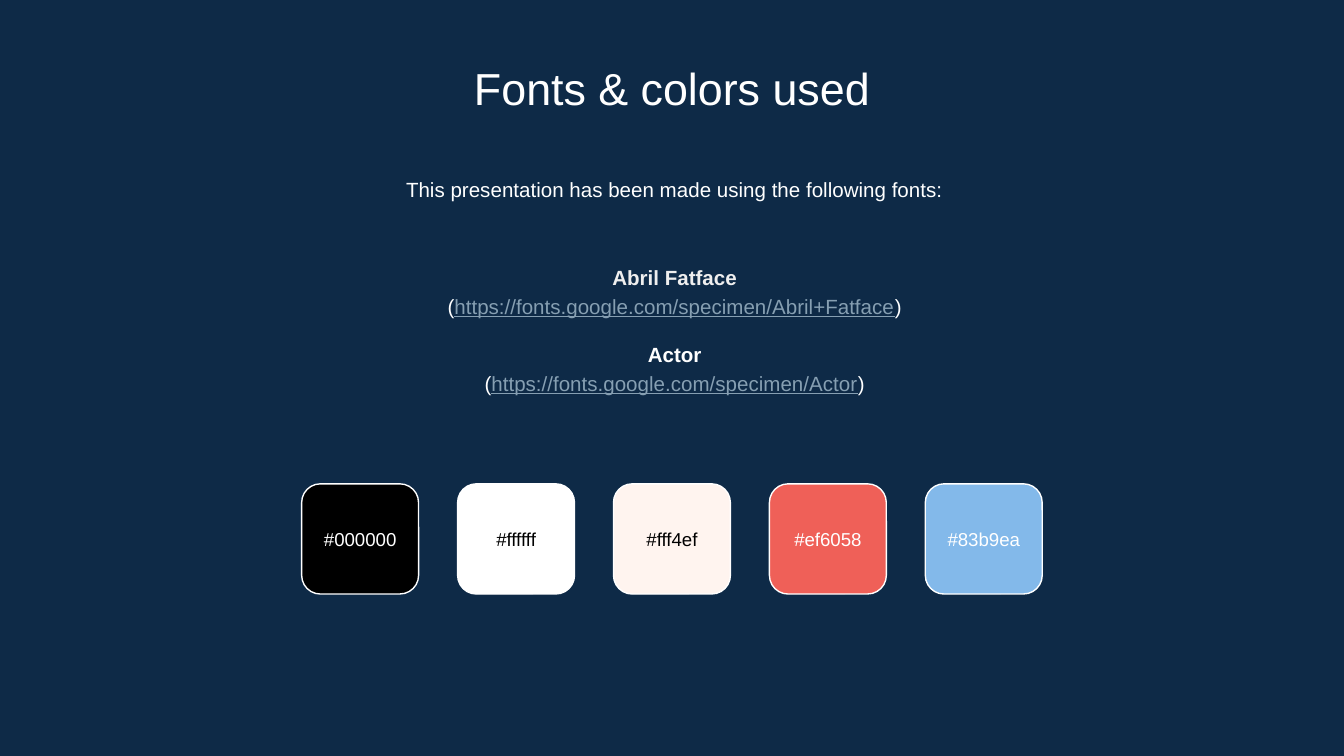
from dataclasses import dataclass

from pptx import Presentation
from pptx import util as u
from pptx.dml.color import RGBColor
from pptx.enum import shapes, text

WIDE = 10
HIGH = WIDE * 9 / 16


@dataclass(frozen=True)
class Theme:
    font: str = "Arial"
    back: str = "0E2A47"
    white: str = "FFFFFF"
    black: str = "000000"
    pale: str = "EFEFEF"
    link: str = "869FB2"
    title: float = 24
    body: float = 11
    label: float = 10
    gap: float = 11
    lead: float = 1.15


class Board:
    """Holds the theme and the current slide."""

    def __init__(self, deck, theme):
        self.theme = theme
        self.slide = deck.slides.add_slide(deck.slide_layouts[6])
        fill = self.slide.background.fill
        fill.solid()
        fill.fore_color.rgb = RGBColor.from_string(theme.back)

    def style(self, run, size, color, bold=False, under=False):
        font = run.font
        font.name = self.theme.font
        font.size = u.Pt(size)
        font.bold = bold
        font.underline = under
        font.color.rgb = RGBColor.from_string(color)

    def frame(self, box, middle=False):
        frame = self.slide.shapes.add_textbox(*map(u.Inches, box)).text_frame
        frame.word_wrap = True
        frame.margin_left = frame.margin_right = u.Inches(0.1)
        frame.margin_top = frame.margin_bottom = u.Inches(0.1)
        anchor = text.MSO_ANCHOR
        frame.vertical_anchor = anchor.MIDDLE if middle else anchor.TOP
        return frame

    def line(self, box, words, size, color, middle=False, lead=1.0):
        frame = self.frame(box, middle)
        frame.text = words
        para = frame.paragraphs[0]
        para.alignment = text.PP_ALIGN.CENTER
        para.line_spacing = lead
        self.style(para.runs[0], size, color)

    def credits(self, box, fonts):
        theme = self.theme
        frame = self.frame(box, middle=True)
        for i, (name, tint, url) in enumerate(fonts):
            head = frame.add_paragraph() if i else frame.paragraphs[0]
            head.text = name
            if i:
                head.space_before = u.Pt(theme.gap)
            self.style(head.runs[0], theme.body, tint, bold=True)

            site = frame.add_paragraph()
            for part in ("(", url, ")"):
                run = site.add_run()
                run.text = part
                linked = part == url
                color = theme.link if linked else theme.white
                self.style(run, theme.body, color, under=linked)

            for para in (head, site):
                para.alignment = text.PP_ALIGN.CENTER
                para.line_spacing = theme.lead

    def swatch(self, left, top, wide, high, color, ink):
        tile = self.slide.shapes.add_shape(
            shapes.MSO_SHAPE.ROUNDED_RECTANGLE,
            *map(u.Inches, (left, top, wide, high)))
        tile.shadow.inherit = False
        tile.adjustments[0] = 0.17
        tile.fill.solid()
        tile.fill.fore_color.rgb = RGBColor.from_string(color.upper())
        tile.line.color.rgb = RGBColor.from_string(self.theme.white)
        tile.line.width = u.Pt(0.75)
        tall = 0.48
        self.line((left, top + (high - tall) / 2, wide, tall),
                  "#" + color, self.theme.label, ink, middle=True)


def main():
    theme = Theme()
    deck = Presentation()
    deck.slide_width, deck.slide_height = u.Inches(WIDE), u.Inches(HIGH)
    board = Board(deck, theme)

    # Title and intro
    board.line((1.15, 0.35, 7.7, 0.53), "Fonts & colors used",
               theme.title, theme.white)
    board.line((1.17, 1.19, 7.7, 0.48),
               "This presentation has been made using the following fonts:",
               theme.body, theme.white, lead=theme.lead)

    # Fonts with their links
    board.credits((1.17, 1.76, 7.7, 1.37), [
        ("Abril Fatface", theme.pale,
         "https://fonts.google.com/specimen/Abril+Fatface"),
        ("Actor", theme.white, "https://fonts.google.com/specimen/Actor"),
    ])

    # Row of colour swatches, centred on the slide
    tones = [("000000", theme.white), ("ffffff", theme.black),
             ("fff4ef", theme.black), ("ef6058", theme.white),
             ("83b9ea", theme.white)]
    side, step = 0.87, 1.16
    start = (WIDE - step * (len(tones) - 1) - side) / 2
    for i, (color, ink) in enumerate(tones):
        board.swatch(start + step * i, 3.6, side, 0.82, color, ink)

    deck.save("out.pptx")


if __name__ == "__main__":
    main()
